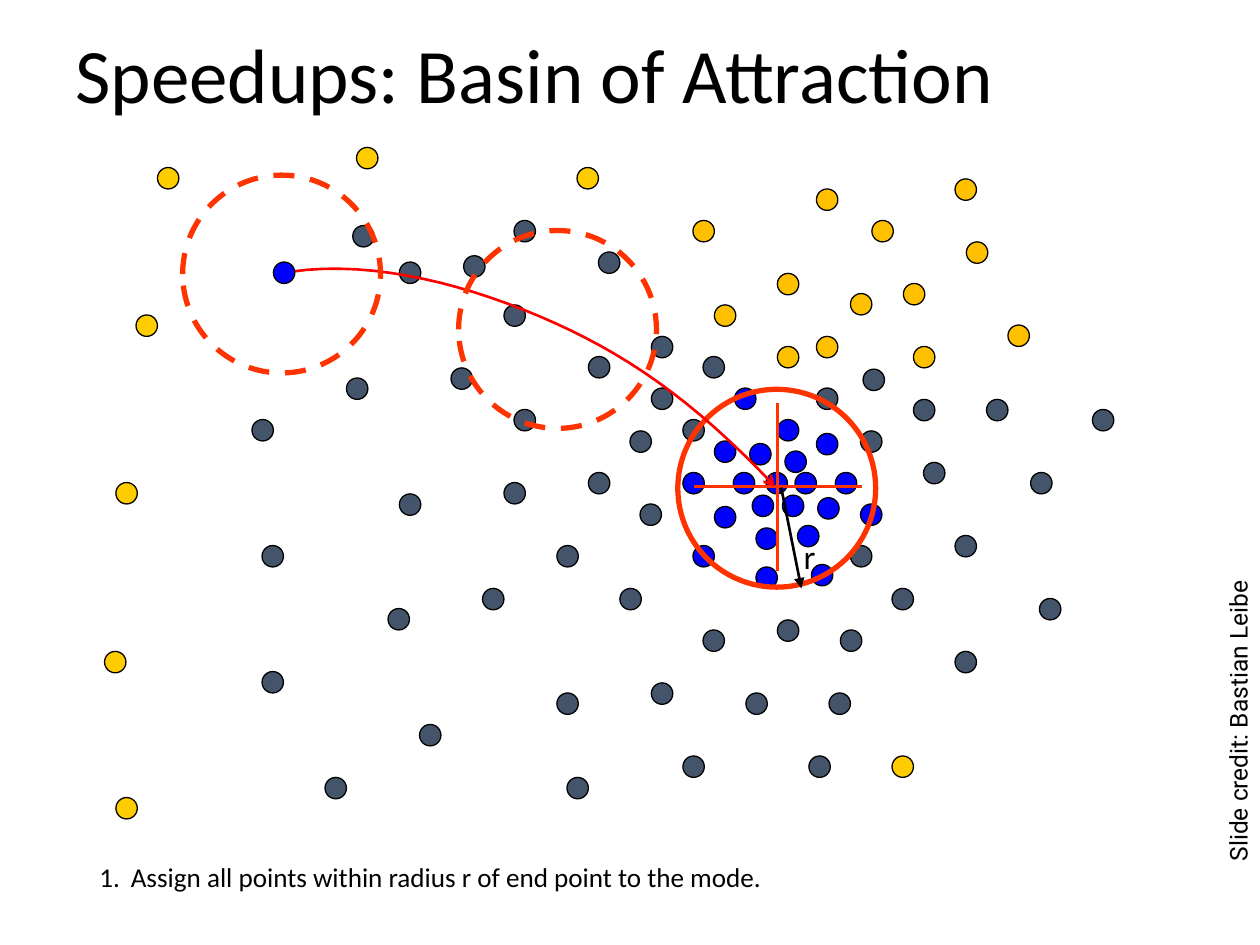
import dataclasses
import typing

import lxml.etree
import pptx
import pptx.dml.color
import pptx.enum.dml
import pptx.enum.shapes
import pptx.enum.text
import pptx.oxml.ns
import pptx.util

Inches = pptx.util.Inches
Point = tuple[float, float]
qn = pptx.oxml.ns.qn

COLORS = {
    "blue": "0000FF",
    "slate": "44546A",
    "amber": "FFC000",
    "yellow": "FFCC00",
    "orange": "FF3300",
    "red": "FF0000",
    "black": "000000",
}
DOT_SIZE = 0.17
RING_SIZE = 1.57
CURVE_STEPS = 16

DOTS: dict[str, list[Point]] = {
    "blue": [
        (6.08, 3.75), (6.31, 3.75), (6.23, 3.58), (5.95, 3.52), (6.21, 3.93),
        (5.97, 3.93), (6.49, 3.95), (5.82, 3.75), (6.63, 3.75), (6.48, 3.44),
        (6.17, 3.33), (6.33, 4.17), (6, 4.19), (5.67, 4.02), (5.42, 3.75),
        (5.67, 3.5), (6.83, 4), (6.44, 4.48), (6, 4.5), (5.5, 4.33), (5.83, 3.08),
    ],
    "slate": [
        (6.75, 4.33), (5.08, 4), (5, 3.42), (5.42, 3.33), (6.48, 3.08),
        (5.17, 3.08), (5.58, 2.83), (6.85, 2.93), (6.83, 3.42), (7.25, 3.17),
        (7.33, 3.67), (7.83, 3.17), (8.67, 3.25), (7.58, 4.25), (8.18, 3.75),
        (7.08, 4.67), (8.25, 4.75), (7.58, 5.17), (6.67, 5), (6.17, 4.92),
        (6.58, 5.5), (6.42, 6), (5.92, 5.5), (5.58, 5), (4.92, 4.67),
        (5.17, 5.42), (5.42, 6), (4.5, 6.17), (4.42, 5.5), (3.83, 4.67),
        (4.42, 4.33), (4.67, 3.75), (4.08, 3.25), (4.67, 2.83), (5.17, 2.67),
        (4.75, 2), (4.08, 1.75), (4, 2.42), (3.58, 2.92), (4, 3.83),
        (3.17, 3.92), (3.08, 4.83), (3.33, 5.75), (2.58, 6.17), (2.08, 5.33),
        (2.08, 4.33), (2.75, 3), (3.17, 2.08), (2, 3.33), (2.8, 1.79), (3.68, 2.03),
    ],
    "amber": [
        (6.17, 2.75), (6.17, 2.17), (5.67, 2.42), (6.48, 2.67), (6.48, 1.5),
        (6.75, 2.33), (7.25, 2.75), (7.17, 2.25), (6.92, 1.75), (7.58, 1.42),
        (7.67, 1.92), (8, 2.58), (5.5, 1.75),
    ],
    "yellow": [
        (7.08, 6), (4.58, 1.33), (0.83, 5.17), (0.92, 6.33), (0.92, 3.83),
        (1.08, 2.5), (1.25, 1.33), (2.83, 1.17),
    ],
}
START_DOT: Point = (2.17, 2.08)
CURVE: list[list[Point]] = [
    [(2.18, 2.18), (2.84, 2.04), (3.62, 2.23), (4.28, 2.51)],
    [(4.28, 2.51), (4.94, 2.79), (5.49, 3.16), (6.15, 3.86)],
]


@dataclasses.dataclass(frozen=True)
class Ring:
    left: float
    top: float
    dashed: bool


@dataclasses.dataclass(frozen=True)
class Segment:
    start: Point
    end: Point
    color: str
    arrow: str = ""


@dataclasses.dataclass(frozen=True)
class Label:
    text: str
    box: tuple[float, float, float, float]
    size: float
    font: str
    wrap: bool = False
    rotation: float = 0
    spacing: float = 1.0
    numbered: bool = False


TARGET_RING = Ring(5.38, 3.09, False)
WINDOW_RINGS = [Ring(1.45, 1.39, True), Ring(3.64, 1.83, True)]
CROSS = [
    Segment((6.17, 3.2), (6.17, 4.53), "orange"),
    Segment((5.51, 3.86), (6.84, 3.86), "orange"),
]
RADIUS = Segment((6.2, 3.87), (6.36, 4.67), "black", "triangle")
LABELS = [
    Label("Speedups: Basin of Attraction", (0.5, 0, 9, 1.25), 44, "Calibri",
          wrap=True, spacing=0.9),
    Label("r", (6.28, 4.22, 0.29, 0.4), 18, "Lato"),
    Label("Slide credit: Bastian Leibe", (8.57, 5.51, 2.51, 0.34), 14, "Roboto",
          rotation=270),
    Label("Assign all points within radius r of end point to the mode.",
          (0.69, 6.75, 8.62, 0.41), 15.5, "Calibri", wrap=True, numbered=True),
]


def rgb(name: str) -> pptx.dml.color.RGBColor:
    return pptx.dml.color.RGBColor.from_string(COLORS[name])


def style_line(s: typing.Any, color: str, width: float, arrow: str = "") -> None:
    s.line.color.rgb = rgb(color)
    s.line.width = pptx.util.Pt(width)
    if arrow:
        ln = s.element.spPr.find(qn("a:ln"))
        lxml.etree.SubElement(ln, qn("a:tailEnd"), type=arrow)


def add_circle(slide: typing.Any, left: float, top: float, size: float) -> typing.Any:
    sp = slide.shapes.add_shape(
        pptx.enum.shapes.MSO_SHAPE.OVAL,
        Inches(left), Inches(top), Inches(size), Inches(size))
    sp.shadow.inherit = False
    return sp


def add_dot(slide: typing.Any, at: Point, color: str) -> None:
    sp = add_circle(slide, *at, DOT_SIZE)
    sp.fill.solid()
    sp.fill.fore_color.rgb = rgb(color)
    style_line(sp, "black", 0.75)


def add_ring(slide: typing.Any, ring: Ring) -> None:
    sp = add_circle(slide, ring.left, ring.top, RING_SIZE)
    sp.fill.background()
    style_line(sp, "orange", 3)
    if ring.dashed:
        sp.line.dash_style = pptx.enum.dml.MSO_LINE.DASH


def add_segment(slide: typing.Any, seg: Segment) -> None:
    cxn = slide.shapes.add_connector(
        pptx.enum.shapes.MSO_CONNECTOR.STRAIGHT,
        *(Inches(v) for v in seg.start + seg.end))
    style_line(cxn, seg.color, 1.5, seg.arrow)
    lxml.etree.SubElement(cxn.element.spPr, qn("a:effectLst"))


def bezier(controls: list[Point], t: float) -> Point:
    u = 1 - t
    weights = (u ** 3, 3 * u * u * t, 3 * u * t * t, t ** 3)
    x, y = (sum(w * c[i] for w, c in zip(weights, controls)) for i in range(2))
    return Inches(x), Inches(y)


def add_curve(slide: typing.Any, pieces: list[list[Point]]) -> None:
    points = [bezier(piece, step / CURVE_STEPS)
              for piece in pieces for step in range(1, CURVE_STEPS + 1)]
    builder = slide.shapes.build_freeform(*bezier(pieces[0], 0))
    builder.add_line_segments(points, close=False)
    sp = builder.convert_to_shape()
    sp.shadow.inherit = False
    sp.fill.background()
    style_line(sp, "red", 1.5, "arrow")


def add_label(slide: typing.Any, label: Label) -> None:
    sp = slide.shapes.add_textbox(*(Inches(v) for v in label.box))
    sp.rotation = label.rotation
    tf = sp.text_frame
    tf.word_wrap = label.wrap
    tf.vertical_anchor = pptx.enum.text.MSO_ANCHOR.MIDDLE
    p = tf.paragraphs[0]
    if label.numbered:
        pPr = p._p.get_or_add_pPr()
        pPr.set("marL", str(Inches(0.25)))
        pPr.set("indent", str(-Inches(0.25)))
        lxml.etree.SubElement(pPr, qn("a:buAutoNum"), type="arabicPeriod")
    p.line_spacing = label.spacing
    r = p.add_run()
    r.text = label.text
    r.font.size = pptx.util.Pt(label.size)
    r.font.name = label.font
    r.font.color.rgb = rgb("black")


def main() -> None:
    prs = pptx.Presentation()
    prs.slide_width, prs.slide_height = Inches(10), Inches(7.5)
    slide = prs.slides.add_slide(prs.slide_layouts[6])
    for color, places in DOTS.items():
        for at in places:
            add_dot(slide, at, color)
    for seg in CROSS:
        add_segment(slide, seg)
    add_ring(slide, TARGET_RING)
    add_curve(slide, CURVE)
    for ring in WINDOW_RINGS:
        add_ring(slide, ring)
    add_segment(slide, RADIUS)
    add_dot(slide, START_DOT, "blue")
    for label in LABELS:
        add_label(slide, label)
    prs.save("out.pptx")


if __name__ == "__main__":
    main()
